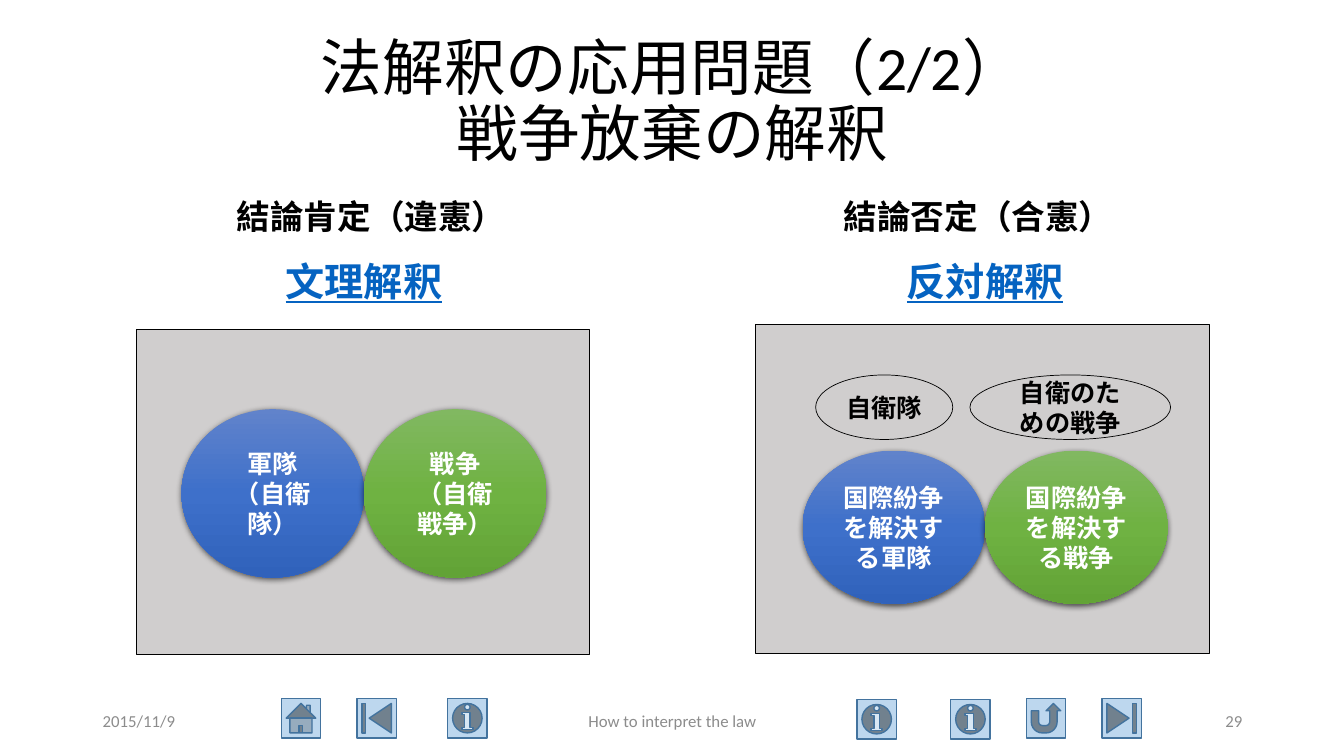
import pptx
import pptx.dml.color
import pptx.enum.shapes
import pptx.enum.text
import pptx.oxml
import pptx.oxml.ns
import pptx.util

Inches = pptx.util.Inches
RGBColor = pptx.dml.color.RGBColor
SHAPE = pptx.enum.shapes.MSO_SHAPE
ALIGN = pptx.enum.text.PP_ALIGN
ANCHOR = pptx.enum.text.MSO_ANCHOR
AUTO_SIZE = pptx.enum.text.MSO_AUTO_SIZE

BLACK = RGBColor(0x00, 0x00, 0x00)
WHITE = RGBColor(0xFF, 0xFF, 0xFF)
PANEL = RGBColor(0xD0, 0xCE, 0xCE)
LINK = RGBColor(0x05, 0x63, 0xC1)
FOOTER = RGBColor(0x8C, 0x8C, 0x8C)
BUTTON = RGBColor(0xBD, 0xD7, 0xEE)
BUTTON_LINE = RGBColor(0x43, 0x73, 0x9E)
BLUES = [RGBColor(0x61, 0x83, 0xCB), RGBColor(0x3E, 0x70, 0xCA), RGBColor(0x30, 0x62, 0xBB)]
GREENS = [RGBColor(0x81, 0xB8, 0x61), RGBColor(0x6F, 0xB2, 0x42), RGBColor(0x62, 0xA3, 0x36)]
FONT = "Calibri"


def write(sp, text, size, color, bold=False, align=ALIGN.CENTER, anchor=ANCHOR.MIDDLE):
    """Fill a shape with uniformly formatted text and return its text frame."""
    tf = sp.text_frame
    tf.word_wrap = True
    tf.auto_size = AUTO_SIZE.NONE
    tf.vertical_anchor = anchor
    tf.text = text
    for p in tf.paragraphs:
        p.alignment = align
        p.font.name = FONT
        p.font.size = pptx.util.Pt(size)
        p.font.bold = bold
        p.font.color.rgb = color
    return tf


def place(sp, left, top, width, height):
    """Move a shape to a box given in inches."""
    sp.left, sp.top = Inches(left), Inches(top)
    sp.width, sp.height = Inches(width), Inches(height)


def add_flat(s, kind, box, fill, line, weight):
    """Add a preset shape with a plain fill and outline and no shadow."""
    sp = s.shapes.add_shape(kind, *map(Inches, box))
    sp.shadow.inherit = False
    sp.fill.solid()
    sp.fill.fore_color.rgb = fill
    sp.line.color.rgb = line
    sp.line.width = pptx.util.Pt(weight)
    return sp


def add_glossy_oval(s, box, colors, text):
    """Add an oval with a vertical gradient, a soft shadow and white text."""
    sp = s.shapes.add_shape(SHAPE.OVAL, *map(Inches, box))
    sp.line.fill.background()
    sp.shadow.inherit = False
    ns = pptx.oxml.ns.nsdecls("a")
    stops = "".join(
        f'<a:gs pos="{i * 50000}"><a:srgbClr val="{c}"/></a:gs>' for i, c in enumerate(colors))
    sp_pr = sp._element.spPr
    sp_pr.find(pptx.oxml.ns.qn("a:prstGeom")).addnext(pptx.oxml.parse_xml(
        f'<a:gradFill {ns} rotWithShape="1"><a:gsLst>{stops}</a:gsLst>'
        '<a:lin ang="5400000" scaled="0"/></a:gradFill>'))
    sp_pr.find(pptx.oxml.ns.qn("a:effectLst")).append(pptx.oxml.parse_xml(
        f'<a:outerShdw {ns} blurRad="57150" dist="19050" dir="5400000" algn="ctr" '
        'rotWithShape="0"><a:srgbClr val="000000"><a:alpha val="63000"/></a:srgbClr>'
        '</a:outerShdw>'))
    write(sp, text, 18, WHITE, bold=True)


def add_title(s):
    """Place the slide title."""
    sp = s.shapes.title
    place(sp, 0.92, 0.3, 11.5, 1.45)
    tf = write(sp, "法解釈の応用問題（2/2）\v戦争放棄の解釈", 44, BLACK)
    tf.paragraphs[0].line_spacing = 0.9


def add_heading(s, idx, left, conclusion, method_left, method):
    """Place a column's conclusion and the underlined method below it."""
    sp = s.placeholders[idx]
    place(sp, left, 1.9, 4.42, 0.53)
    p = write(sp, conclusion, 24, BLACK, bold=True).paragraphs[0]
    p.line_spacing = 0.9
    p.space_before = pptx.util.Pt(10)
    sp = s.shapes.add_textbox(*map(Inches, (method_left, 2.5, 2.7, 0.57)))
    tf = write(sp, method, 28, LINK, bold=True, anchor=ANCHOR.TOP)
    tf.paragraphs[0].font.underline = True


def add_panel(s, box, weight, pair_offset, pair_height, pair_texts, exceptions=()):
    """Draw a grey panel with a touching pair of ovals and outlined exceptions."""
    left, top = box[:2]
    add_flat(s, SHAPE.RECTANGLE, box, PANEL, BLACK, weight)
    dx, dy = pair_offset
    width = 1.81
    for i, (colors, text) in enumerate(zip((BLUES, GREENS), pair_texts)):
        add_glossy_oval(s, (left + dx + i * width, top + dy, width, pair_height), colors, text)
    for offset, oval_width, text in exceptions:
        oval = (left + offset, top + 0.5, oval_width, 0.64)
        sp = add_flat(s, SHAPE.OVAL, oval, PANEL, BLACK, 0.5)
        write(sp, text, 18, BLACK, bold=True)


def add_footer(s, top):
    """Draw the navigation buttons and the date, footer and number."""
    info = SHAPE.ACTION_BUTTON_INFORMATION
    buttons = [
        (SHAPE.ACTION_BUTTON_HOME, 2.79, 0), (SHAPE.ACTION_BUTTON_BEGINNING, 3.54, 0),
        (info, 4.44, 0), (info, 8.5, 0.01), (info, 9.43, 0.01),
        (SHAPE.ACTION_BUTTON_RETURN, 10.18, 0), (SHAPE.ACTION_BUTTON_END, 10.93, 0),
    ]
    for kind, left, drop in buttons:
        add_flat(s, kind, (left, top + drop, 0.39, 0.39), BUTTON, BUTTON_LINE, 1)
    for left, width, text, align in [
        (0.92, 3, "2015/11/9", ALIGN.LEFT),
        (4.42, 4.5, "How to interpret the law", ALIGN.CENTER),
        (9.42, 3, "29", ALIGN.RIGHT),
    ]:
        sp = s.shapes.add_textbox(*map(Inches, (left, top + 0.02, width, 0.4)))
        write(sp, text, 12, FOOTER, align=align)


def main():
    """Build the slide and save it."""
    prs = pptx.Presentation()
    prs.slide_width, prs.slide_height = Inches(13.33), Inches(7.5)
    s = prs.slides.add_slide(prs.slide_layouts.get_by_name("Comparison"))
    for idx in (2, 4):
        sp = s.placeholders[idx]._element
        sp.getparent().remove(sp)
    add_title(s)
    add_heading(s, 1, 1.47, "結論肯定（違憲）", 2.26, "文理解釈")
    add_heading(s, 3, 7.49, "結論否定（合憲）", 8.42, "反対解釈")
    add_panel(s, (1.35, 3.27, 4.5, 3.22), 0.5, (0.45, 0.79), 1.67,
              ["軍隊\n（自衛隊）", "戦争\n（自衛\v戦争）"])
    add_panel(s, (7.49, 3.22, 4.5, 3.26), 0.25, (0.47, 1.25), 1.52,
              ["国際紛争を解決する軍隊", "国際紛争を解決する戦争"],
              [(0.6, 1.36, "自衛隊"), (2.13, 1.99, "自衛のための戦争")])
    add_footer(s, 6.93)
    prs.save("out.pptx")


if __name__ == "__main__":
    main()
